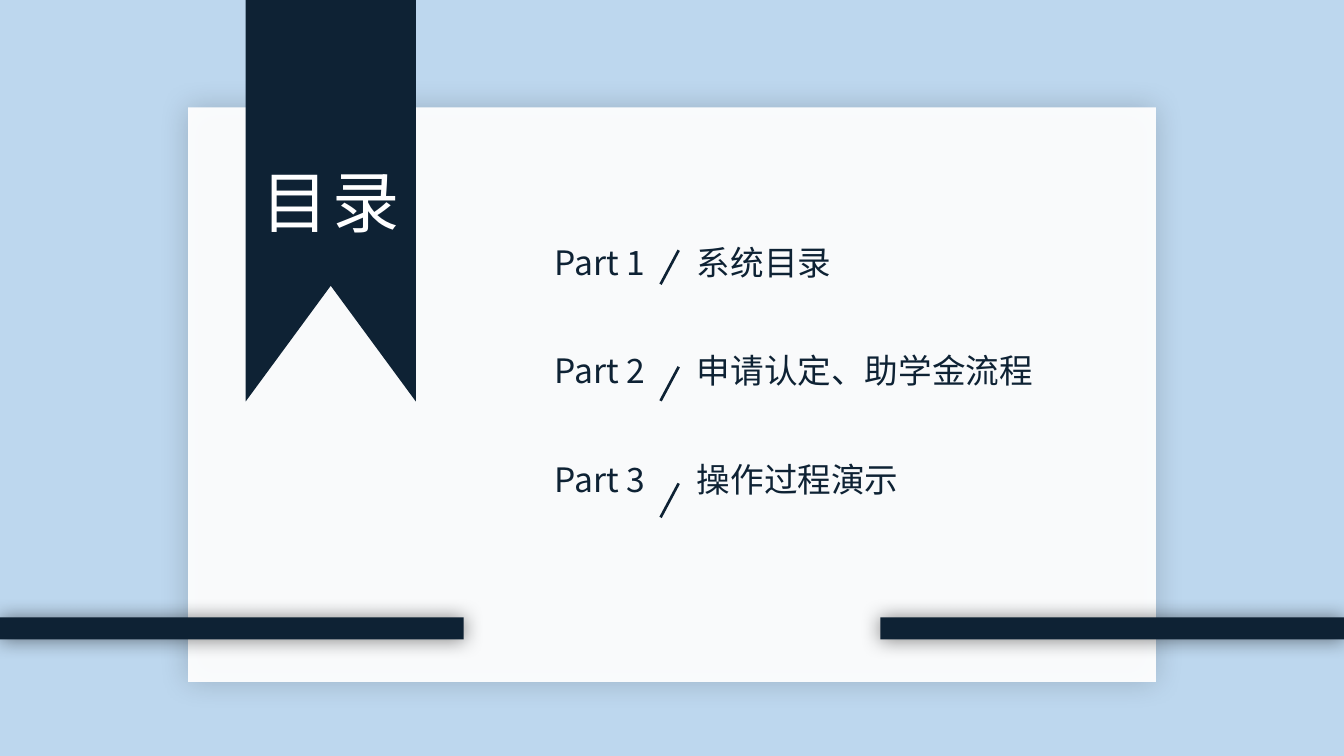
from lxml import etree
from pptx import Presentation
from pptx.dml.color import RGBColor
from pptx.enum.shapes import MSO_CONNECTOR, MSO_SHAPE
from pptx.enum.text import MSO_ANCHOR, MSO_AUTO_SIZE, PP_ALIGN
from pptx.oxml.ns import qn
from pptx.util import Inches, Pt

RECT, LINE = MSO_SHAPE.RECTANGLE, MSO_CONNECTOR.STRAIGHT
TOP, MID = MSO_ANCHOR.TOP, MSO_ANCHOR.MIDDLE
LEFT, MIDST = PP_ALIGN.LEFT, PP_ALIGN.CENTER
FIXED = MSO_AUTO_SIZE.NONE

FONT = "Noto Sans CJK SC"
HUES = {"sky": "BDD7EE", "navy": "0E2234", "white": "FFFFFF", "black": "000000"}


def node(root, tag, **attrs):
    """Add a DrawingML child and return it."""
    return etree.SubElement(root, qn(tag), {k: str(v) for k, v in attrs.items()})


class Deck:
    """Style and current slide; all places are percent of the slide."""

    def __init__(self, wide, high):
        self.file = Presentation()
        self.file.slide_width = self.wide = Inches(wide)
        self.file.slide_height = self.high = Inches(high)
        self.slide = self.file.slides.add_slide(self.file.slide_layouts[3])
        self.shapes = self.slide.shapes

    def x(self, part):
        return round(self.wide * part / 100)

    def y(self, part):
        return round(self.high * part / 100)

    def box(self, left, top, wide, high):
        return self.x(left), self.y(top), self.x(wide), self.y(high)

    def paint(self, shape, hue):
        shape.fill.solid()
        shape.fill.fore_color.rgb = RGBColor.from_string(HUES[hue])
        shape.line.fill.background()
        shape.shadow.inherit = False
        return shape

    def rect(self, area, hue, alpha=None, glow=None):
        shape = self.paint(self.shapes.add_shape(RECT, *self.box(*area)), hue)
        props = shape._element.spPr
        if alpha:
            tint = props.find(qn("a:solidFill"))[0]
            node(tint, "a:alpha", val=alpha * 1000)
        if glow:
            dark, blur = glow
            cast = node(props.find(qn("a:effectLst")), "a:outerShdw",
                        blurRad=Pt(blur), dist=0, dir=0, algn="ctr", rotWithShape=0)
            tint = node(cast, "a:srgbClr", val=HUES["black"])
            node(tint, "a:alpha", val=dark * 1000)

    def outline(self, points, hue):
        spots = [(self.x(x), self.y(y)) for x, y in points]
        pen = self.shapes.build_freeform(*spots[0])
        pen.add_line_segments(spots[1:], close=True)
        self.paint(pen.convert_to_shape(), hue)

    def stroke(self, start, end, hue, width):
        line = self.shapes.add_connector(
            LINE, self.x(start[0]), self.y(start[1]), self.x(end[0]), self.y(end[1]))
        line.line.color.rgb = RGBColor.from_string(HUES[hue])
        line.line.width = Pt(width)
        node(line._element.spPr, "a:effectLst")

    def text(self, slot, area, lines, size, hue, align=LEFT, anchor=TOP, gap=0, track=0):
        """Fill a placeholder and bring it to the front."""
        shape = self.slide.placeholders[slot]
        self.shapes._spTree.append(shape._element)
        shape.left, shape.top, shape.width, shape.height = self.box(*area)
        frame = shape.text_frame
        frame.auto_size, frame.word_wrap = FIXED, True
        frame.vertical_anchor = anchor
        frame.margin_top = frame.margin_bottom = 0
        for i, words in enumerate(lines):
            para = frame.add_paragraph() if i else frame.paragraphs[0]
            para.alignment, para.line_spacing = align, 1.0
            para.space_before, para.space_after = Pt(0), Pt(gap)
            props = para._p.get_or_add_pPr()
            props.set("marL", "0")
            props.set("indent", "0")
            node(props, "a:buNone")
            run = para.add_run()
            run.text = words
            run.font.name, run.font.size = FONT, Pt(size)
            run.font.color.rgb = RGBColor.from_string(HUES[hue])
            style = run._r.get_or_add_rPr()
            node(style, "a:ea", typeface=FONT)
            if track:
                style.set("spc", str(round(track * 100)))


def main():
    deck = Deck(14.06, 7.91)

    # Backdrop and card
    deck.rect((0, 0, 100, 100), "sky")
    deck.rect((14, 14.2, 72, 76), "white", alpha=94, glow=(18, 22))

    # Ribbon with its heading
    left, right, foot = 18.28, 30.94, 53.1
    deck.outline([(left, 0), (right, 0), (right, foot),
                  ((left + right) / 2, 37.8), (left, foot)], "navy")
    deck.text(0, (18.21, 20.5, 12.8, 12), ["目录"], 50.6, "white",
              MIDST, MID, track=3.2)

    # Contents: part numbers, slashes, topics
    topics = ["系统目录", "申请认定、助学金流程", "操作过程演示"]
    parts = [f"Part {n}" for n in range(1, len(topics) + 1)]
    top, pitch = 32, 15.42
    high = pitch * len(topics)
    for slot, x, wide, lines in ((1, 40.54, 8.89, parts), (2, 51.14, 27.45, topics)):
        deck.text(slot, (x, top, wide, high), lines, 25.3, "navy", gap=51.2)
    for row in range(len(topics)):
        y = top + row * pitch
        deck.stroke((50.5, y + 1.1), (49.15, y + 5.6), "navy", 2)

    # Side bars
    span = 34.5
    for x in (0, 100 - span):
        deck.rect((x, 81.67, span, 2.9), "navy", glow=(50, 15))

    deck.file.save("out.pptx")


if __name__ == "__main__":
    main()
